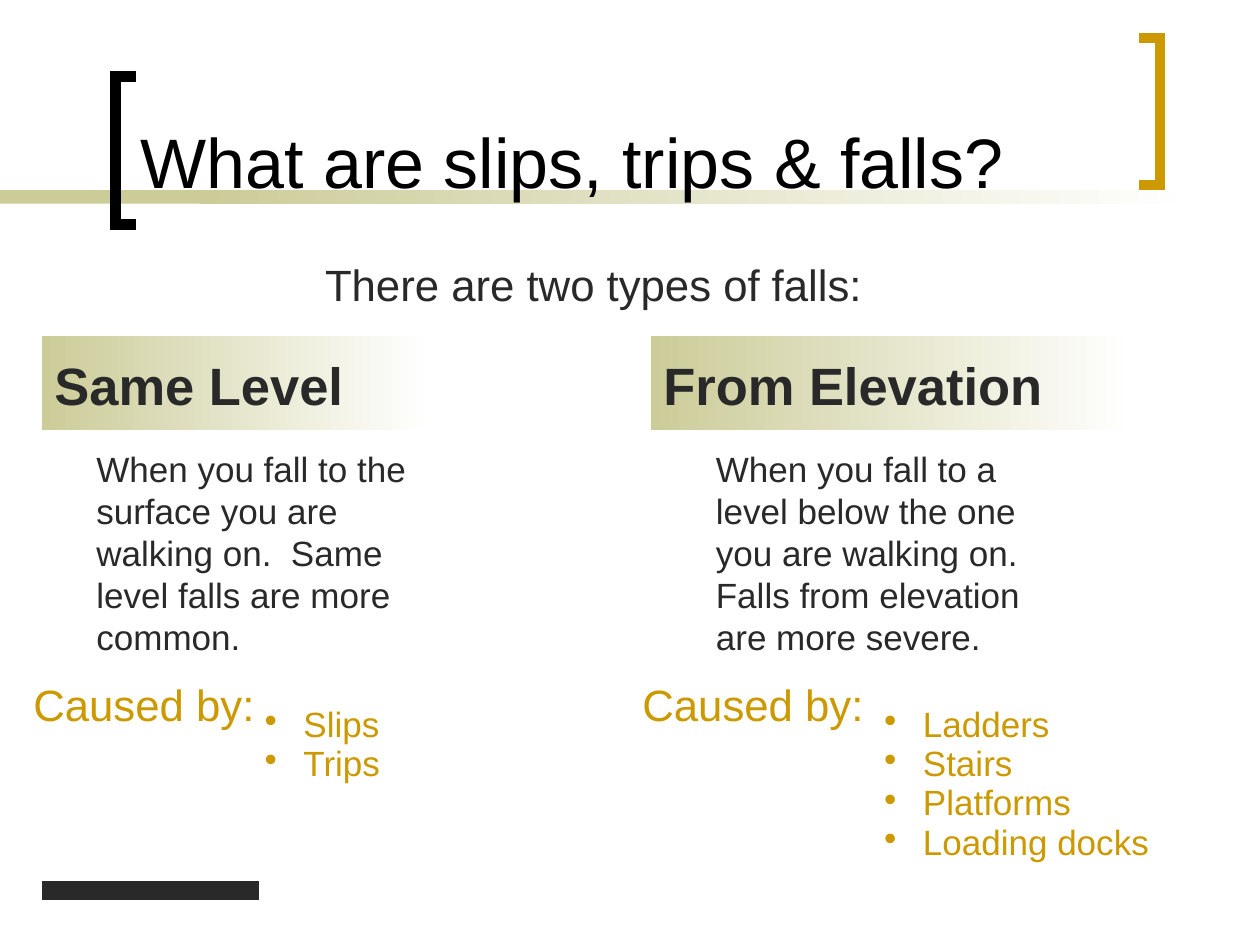
from lxml import etree
from pptx import Presentation
from pptx import util as u
from pptx.dml.color import RGBColor
from pptx.enum import shapes, text
from pptx.oxml import ns

PX = 7620  # EMU per px, 120 px to the inch
FONT = "Arial"
BLACK, INK, GOLD = "000000", "292929", "CC9900"
KHAKI, WHITE = "CCCC99", "FFFFFF"

COLUMNS = [
    dict(left=40, bar_width=370, heading="Same Level", body_left=80,
         body="When you fall to the\vsurface you are walking on.  "
              "Same level falls are more common.",
         cause_left=20, list_box=(240, 680, 170, 148),
         causes=["Slips", "Trips"]),
    dict(left=620, bar_width=460, heading="From Elevation", body_left=670,
         body="When you fall to a level below the one you are walking on.  "
              "Falls from elevation are more severe.",
         cause_left=600, list_box=(830, 680, 330, 220),
         causes=["Ladders", "Stairs", "Platforms", "Loading docks"]),
]


def px(*lengths):
    return [u.Emu(length * PX) for length in lengths]


def color(value):
    return RGBColor.from_string(value)


def style(para, size, ink, bold=False):
    font = para.font
    font.name, font.size, font.bold = FONT, u.Pt(size), bold
    font.color.rgb = color(ink)


def place(shape, box):
    shape.left, shape.top, shape.width, shape.height = px(*box)


def add_bar(page, box, fade=True):
    """Add a khaki bar, fading to white on the right if asked."""
    bar = page.shapes.add_shape(shapes.MSO_SHAPE.RECTANGLE, *px(*box))
    bar.shadow.inherit = False
    bar.line.fill.background()
    if fade:
        bar.fill.gradient()
        bar.fill.gradient_angle = 0
        for stop, value in zip(bar.fill.gradient_stops, (KHAKI, WHITE)):
            stop.color.rgb = color(value)
    else:
        bar.fill.solid()
        bar.fill.fore_color.rgb = color(KHAKI)


def add_bracket(page, spine, tip, top, bottom, ink):
    """Add a square bracket with its upright at spine and its ends at tip."""
    builder = page.shapes.build_freeform(tip, top, scale=PX)
    builder.add_line_segments(
        [(spine, top), (spine, bottom), (tip, bottom)], close=False)
    bracket = builder.convert_to_shape()
    bracket.shadow.inherit = False
    bracket.fill.background()
    bracket.line.color.rgb = color(ink)
    bracket.line.width = u.Pt(6)
    etree.SubElement(bracket.line._get_or_add_ln(), ns.qn("a:miter"), lim="800000")


def add_text(page, box, words, size, ink, bold=False, align=None):
    frame = page.shapes.add_textbox(*px(*box)).text_frame
    frame.word_wrap = True
    para = frame.paragraphs[0]
    para.text = words
    para.alignment = align
    style(para, size, ink, bold)


def fill_list(holder, box, items):
    place(holder, box)
    frame = holder.text_frame
    frame.auto_size = text.MSO_AUTO_SIZE.NONE
    frame.text = "\n".join(items)
    for para in frame.paragraphs:
        style(para, 20, GOLD)
        para.line_spacing = 0.5
        para.space_before = u.Pt(10.5)
        indent = 37 * PX
        props = para._p.get_or_add_pPr()
        props.set("marL", str(indent))
        props.set("indent", str(-indent))
        etree.SubElement(props, ns.qn("a:buFont"), typeface=FONT)
        etree.SubElement(props, ns.qn("a:buChar"), char="•")


def set_title(page, box, words):
    """Fill the title and bring it in front of the decoration."""
    title = page.shapes.title
    place(title, box)
    frame = title.text_frame
    frame.auto_size = text.MSO_AUTO_SIZE.NONE
    frame.vertical_anchor = text.MSO_ANCHOR.BOTTOM
    frame.text = words
    para = frame.paragraphs[0]
    para.alignment = text.PP_ALIGN.LEFT
    style(para, 40, BLACK)
    title.element.getparent().append(title.element)


def add_rule(page, left, right, y):
    rule = page.shapes.add_connector(
        shapes.MSO_CONNECTOR.STRAIGHT, *px(left, y, right, y))
    rule.line.color.rgb = color(INK)
    rule.line.width = u.Pt(11)
    etree.SubElement(rule._element.spPr, ns.qn("a:effectLst"))


def add_column(page, holder, column):
    left = column["left"]
    add_bar(page, (left, 320, column["bar_width"], 90))
    add_text(page, (left, 330, column["bar_width"], 72),
             column["heading"], 30, INK, bold=True)
    add_text(page, (column["body_left"], 420, 360, 212), column["body"], 20, INK)
    add_text(page, (column["cause_left"], 640, 250, 62), "Caused by:", 25, GOLD)
    fill_list(holder, column["list_box"], column["causes"])


def main():
    deck = Presentation()
    deck.slide_width, deck.slide_height = px(1200, 900)
    page = deck.slides.add_slide(deck.slide_layouts[3])

    add_bar(page, (0, 181, 280, 13), fade=False)
    add_bar(page, (190, 181, 950, 13))
    add_bracket(page, 110, 130, 73, 214, BLACK)
    add_bracket(page, 1105, 1085, 36, 176, GOLD)
    set_title(page, (122, 13, 940, 186), "What are slips, trips & falls?")

    add_text(page, (70, 240, 990, 62), "There are two types of falls:", 25, INK,
             align=text.PP_ALIGN.CENTER)
    for index, column in enumerate(COLUMNS, start=1):
        add_column(page, page.placeholders[index], column)
    add_rule(page, 40, 247, 848)

    deck.save("out.pptx")


if __name__ == "__main__":
    main()
